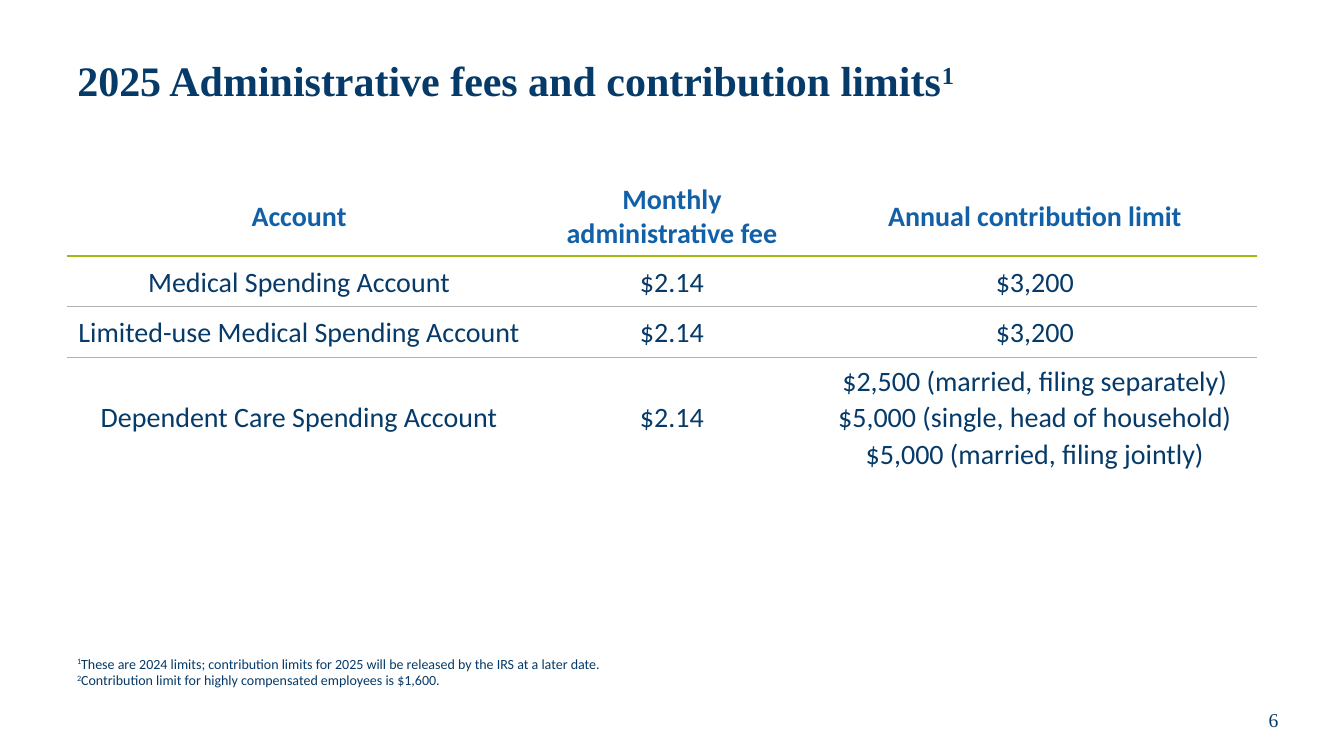
from dataclasses import dataclass

from lxml import etree
from pptx import Presentation
from pptx.dml.color import RGBColor
from pptx.enum.text import MSO_ANCHOR, MSO_AUTO_SIZE, PP_ALIGN
from pptx.oxml.ns import qn
from pptx.util import Pt

CENTER, LEFT = PP_ALIGN.CENTER, PP_ALIGN.LEFT
MIDDLE = MSO_ANCHOR.MIDDLE
NO_AUTOFIT, GROW = MSO_AUTO_SIZE.NONE, MSO_AUTO_SIZE.SHAPE_TO_FIT_TEXT
TITLE_ONLY = 5


@dataclass(frozen=True)
class Theme:
    navy: str = "063A68"
    blue: str = "1260A7"
    green: str = "A0B810"
    grey: str = "B2B2B2"
    serif: str = "Times New Roman"
    sans: str = "Calibri"
    title: int = 30
    body: int = 20
    page: int = 14
    note: int = 10


THEME = Theme()
HEADER_RULE = (THEME.green, 2.25)
ROW_RULE = (THEME.grey, 0.5)

FEES = [
    ("Account", "Monthly administrative fee", "Annual contribution limit"),
    ("Medical Spending Account", "$2.14", "$3,200"),
    ("Limited-use Medical Spending Account", "$2.14", "$3,200"),
    ("Dependent Care Spending Account", "$2.14",
     "$2,500 (married, filing separately)\n"
     "$5,000 (single, head of household)\n"
     "$5,000 (married, filing jointly)"),
]
COLUMN_SHARES = (4.6, 2.8, 4.4)
ROW_HEIGHTS = (56.4, 36, 36, 82)
NOTES = [
    ("1", "These are 2024 limits; contribution limits for 2025 will be "
          "released by the IRS at a later date."),
    ("2", "Contribution limit for highly compensated employees is $1,600."),
]


def style(p, face, size, color, bold=False, align=LEFT):
    p.alignment = align
    p.font.name, p.font.size, p.font.bold = face, Pt(size), bold
    p.font.color.rgb = RGBColor.from_string(color)


def add_superscript(p, text):
    r = p.add_run()
    r.text = text
    r.font._element.set("baseline", "30000")


def add_rule(cell, side, color, width):
    """Draw the cell's top (lnT) or bottom (lnB) border."""
    ln = etree.SubElement(cell._tc.get_or_add_tcPr(), qn(f"a:{side}"),
                          w=str(Pt(width)))
    fill = etree.SubElement(ln, qn("a:solidFill"))
    etree.SubElement(fill, qn("a:srgbClr"), val=color)


def place_title(slide, x, y, w, h):
    sp = slide.shapes.title
    sp.left, sp.top, sp.width, sp.height = Pt(x), Pt(y), Pt(w), Pt(h)
    tf = sp.text_frame
    tf.auto_size, tf.vertical_anchor = NO_AUTOFIT, MIDDLE
    p = tf.paragraphs[0]
    p.add_run().text = "2025 Administrative fees and contribution limits"
    add_superscript(p, "1")
    p.line_spacing = 0.9
    style(p, THEME.serif, THEME.title, THEME.navy, bold=True)


def fill_cell(cell, text, row):
    is_header = row == 0
    cell.text = text
    cell.vertical_anchor = MIDDLE
    for p in cell.text_frame.paragraphs:
        style(p, THEME.sans, THEME.body, THEME.blue if is_header else THEME.navy,
              bold=is_header, align=CENTER)
        if not is_header:
            p.line_spacing = 1.07
    if not is_header:
        add_rule(cell, "lnT", *(HEADER_RULE if row == 1 else ROW_RULE))
    if row < len(FEES) - 1:
        add_rule(cell, "lnB", *(HEADER_RULE if is_header else ROW_RULE))
    cell.fill.background()


def add_fee_table(slide, x, y, w):
    table = slide.shapes.add_table(len(FEES), len(COLUMN_SHARES), Pt(x), Pt(y),
                                   Pt(w), Pt(sum(ROW_HEIGHTS))).table
    table.first_row = table.horz_banding = False
    for column, share in zip(table.columns, COLUMN_SHARES):
        column.width = Pt(w * share / sum(COLUMN_SHARES))
    for i, (height, texts) in enumerate(zip(ROW_HEIGHTS, FEES)):
        table.rows[i].height = Pt(height)
        for j, text in enumerate(texts):
            fill_cell(table.cell(i, j), text, i)


def add_footnotes(slide, x, y, w, h):
    tf = slide.shapes.add_textbox(Pt(x), Pt(y), Pt(w), Pt(h)).text_frame
    tf.word_wrap, tf.auto_size = True, GROW
    for i, (mark, text) in enumerate(NOTES):
        p = tf.add_paragraph() if i else tf.paragraphs[0]
        add_superscript(p, mark)
        p.add_run().text = text
        style(p, THEME.sans, THEME.note, THEME.navy)


def add_page_number(slide, x, y, w, h):
    tf = slide.shapes.add_textbox(Pt(x), Pt(y), Pt(w), Pt(h)).text_frame
    tf.word_wrap, tf.vertical_anchor = True, MIDDLE
    p = tf.paragraphs[0]
    p.text = "6"
    style(p, THEME.serif, THEME.page, THEME.navy, align=CENTER)


def main():
    prs = Presentation()
    prs.slide_width, prs.slide_height = Pt(960), Pt(540)
    slide = prs.slides.add_slide(prs.slide_layouts[TITLE_ONLY])
    margin = 48
    place_title(slide, margin, 18, 864, 83)
    add_fee_table(slide, margin, 126.5, 849.6)
    add_footnotes(slide, margin, 464.4, 612.7, 31.5)
    add_page_number(slide, 867.6, 496, 84.2, 36)
    prs.save("out.pptx")


if __name__ == "__main__":
    main()
